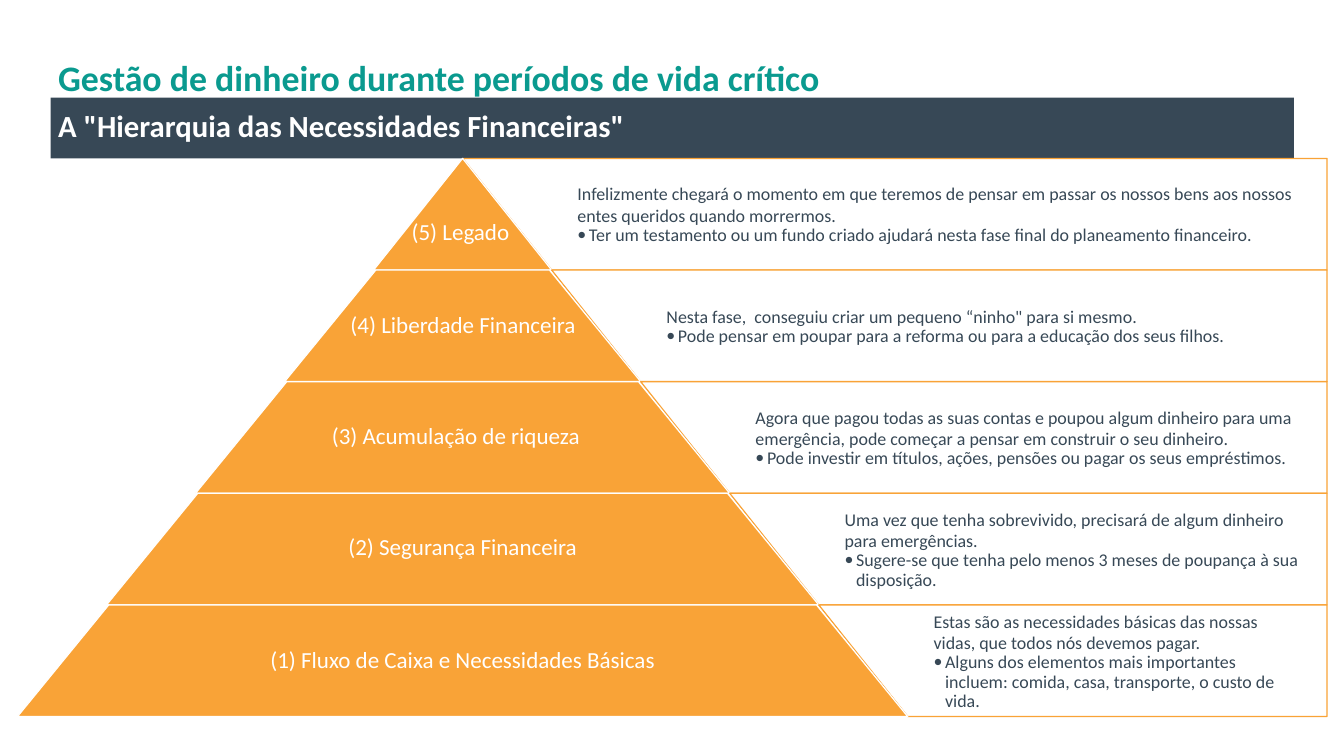
from lxml.etree import SubElement
from pptx import Presentation
from pptx.dml.color import RGBColor
from pptx.enum.shapes import MSO_SHAPE
from pptx.enum.text import MSO_ANCHOR, MSO_AUTO_SIZE, PP_ALIGN
from pptx.oxml.ns import qn
from pptx.util import Inches, Pt

TEAL = RGBColor(0x0A, 0x9A, 0x8F)
SLATE = RGBColor(0x37, 0x48, 0x56)
ORANGE = RGBColor(0xF9, 0xA3, 0x37)
WHITE = RGBColor(0xFF, 0xFF, 0xFF)

SLIDE_WIDTH, SLIDE_HEIGHT = 1050 / 72, 591 / 72
APEX_X, APEX_Y = 5.02, 1.72
PYRAMID_WIDTH, PYRAMID_HEIGHT = 9.66, 6.06
PANEL_RIGHT = 14.4
BULLET_INDENT = 1 / 8

LEVELS = [
    ("(5) Legado ", (4.06, 1.93, 1.93),
     "Infelizmente chegará o momento em que teremos de pensar em passar os nossos bens aos nossos entes queridos quando morrermos.",
     "Ter um testamento ou um fundo criado ajudará nesta fase final do planeamento financeiro."),
    ("(4) Liberdade Financeira", (3.77, 2.93, 2.51),
     "Nesta fase,  conseguiu criar um pequeno “ninho\" para si mesmo. ",
     "Pode pensar em poupar para a reforma ou para a educação dos seus filhos."),
    ("(3) Acumulação de riqueza ", (3.09, 4.14, 3.77),
     "Agora que pagou todas as suas contas e poupou algum dinheiro para uma emergência, pode começar a pensar em construir o seu dinheiro. ",
     "Pode investir em títulos, ações, pensões ou pagar os seus empréstimos."),
    ("(2) Segurança Financeira", (2.51, 5.35, 5.02),
     "Uma vez que tenha sobrevivido, precisará de algum dinheiro para emergências. ",
     "Sugere-se que tenha pelo menos 3 meses de poupança à sua disposição."),
    ("(1) Fluxo de Caixa e Necessidades Básicas", (1.88, 6.57, 6.28),
     "Estas são as necessidades básicas das nossas vidas, que todos nós devemos pagar. ",
     "Alguns dos elementos mais importantes incluem: comida, casa, transporte, o custo de vida."),
]


def write(paragraph, text, size, color, bold=False, align=PP_ALIGN.LEFT, spacing=0.9, bullet=False):
    paragraph.text = text
    paragraph.alignment = align
    paragraph.line_spacing = spacing
    paragraph.space_before = Pt(0)
    properties = paragraph._p.get_or_add_pPr()
    indent = Inches(BULLET_INDENT) if bullet else 0
    properties.set("marL", str(indent))
    properties.set("indent", str(-indent))
    if bullet:
        SubElement(properties, qn("a:buFont")).set("typeface", "Calibri")
        SubElement(properties, qn("a:buChar")).set("char", "•")
    else:
        SubElement(properties, qn("a:buNone"))
    paragraph.font.name = "Calibri"
    paragraph.font.size = Pt(size)
    paragraph.font.bold = bold
    paragraph.font.color.rgb = color


def set_frame(frame, inset_x, inset_y):
    frame.word_wrap = True
    frame.auto_size = MSO_AUTO_SIZE.NONE
    frame.vertical_anchor = MSO_ANCHOR.MIDDLE
    frame.margin_left = frame.margin_right = Inches(inset_x)
    frame.margin_top = frame.margin_bottom = Inches(inset_y)


def fill_placeholder(placeholder, box, text, size, color, align):
    placeholder.left, placeholder.top, placeholder.width, placeholder.height = map(Inches, box)
    set_frame(placeholder.text_frame, 0.08, 0.05)
    write(placeholder.text_frame.paragraphs[0], text, size, color, True, align)


def add_text(slide, box, inset):
    frame = slide.shapes.add_textbox(*map(Inches, box)).text_frame
    set_frame(frame, inset, inset)
    return frame


def style(shape, fill, line):
    shape.shadow.inherit = False
    shape.fill.solid()
    shape.fill.fore_color.rgb = fill
    shape.line.color.rgb = line
    shape.line.width = Pt(1)


def add_panel(slide, top, height, upper_left, lower_left, intro, advice):
    corners = [(PANEL_RIGHT, top), (PANEL_RIGHT, top + height), (lower_left, top + height)]
    builder = slide.shapes.build_freeform(Inches(upper_left), Inches(top))
    builder.add_line_segments([(Inches(x), Inches(y)) for x, y in corners], close=True)
    panel = builder.convert_to_shape()
    style(panel, WHITE, ORANGE)
    color = panel._element.spPr.find(qn("a:solidFill"))[0]
    SubElement(color, qn("a:alpha")).set("val", "90000")
    frame = add_text(slide, (lower_left, top, PANEL_RIGHT - lower_left, height), 0.28)
    write(frame.paragraphs[0], intro, 14, SLATE, spacing=1.0)
    write(frame.add_paragraph(), advice, 14, SLATE, bullet=True)


def add_tier(slide, top, height, width, label, label_place):
    tier = slide.shapes.add_shape(
        MSO_SHAPE.TRAPEZOID, Inches(APEX_X - width / 2), Inches(top), Inches(width), Inches(height))
    tier.adjustments[0] = 0.817
    style(tier, ORANGE, WHITE)
    frame = add_text(slide, (*label_place, height), 0.02)
    write(frame.paragraphs[0], label, 18, WHITE, align=PP_ALIGN.CENTER)


def main():
    presentation = Presentation()
    presentation.slide_width = Inches(SLIDE_WIDTH)
    presentation.slide_height = Inches(SLIDE_HEIGHT)
    slide = presentation.slides.add_slide(presentation.slide_layouts[1])
    fill_placeholder(slide.shapes.title, (0.55, 0.47, 13.48, 0.79),
                     "Gestão de dinheiro durante períodos de vida crítico", 28, TEAL, PP_ALIGN.LEFT)
    banner = slide.placeholders[1]
    banner.fill.solid()
    banner.fill.fore_color.rgb = SLATE
    fill_placeholder(banner, (0.55, 1.06, 13.49, 0.66),
                     "A \"Hierarquia das Necessidades Financeiras\" ", 24, WHITE, PP_ALIGN.JUSTIFY)

    height = PYRAMID_HEIGHT / len(LEVELS)
    widening = PYRAMID_WIDTH / len(LEVELS)
    for index, (label, label_place, intro, advice) in enumerate(LEVELS):
        top = APEX_Y + index * height
        width = (index + 1) * widening
        upper_left = APEX_X + index * widening / 2
        add_panel(slide, top, height, upper_left, APEX_X + width / 2, intro, advice)
        add_tier(slide, top, height, width, label, label_place)

    presentation.save("out.pptx")


if __name__ == "__main__":
    main()
